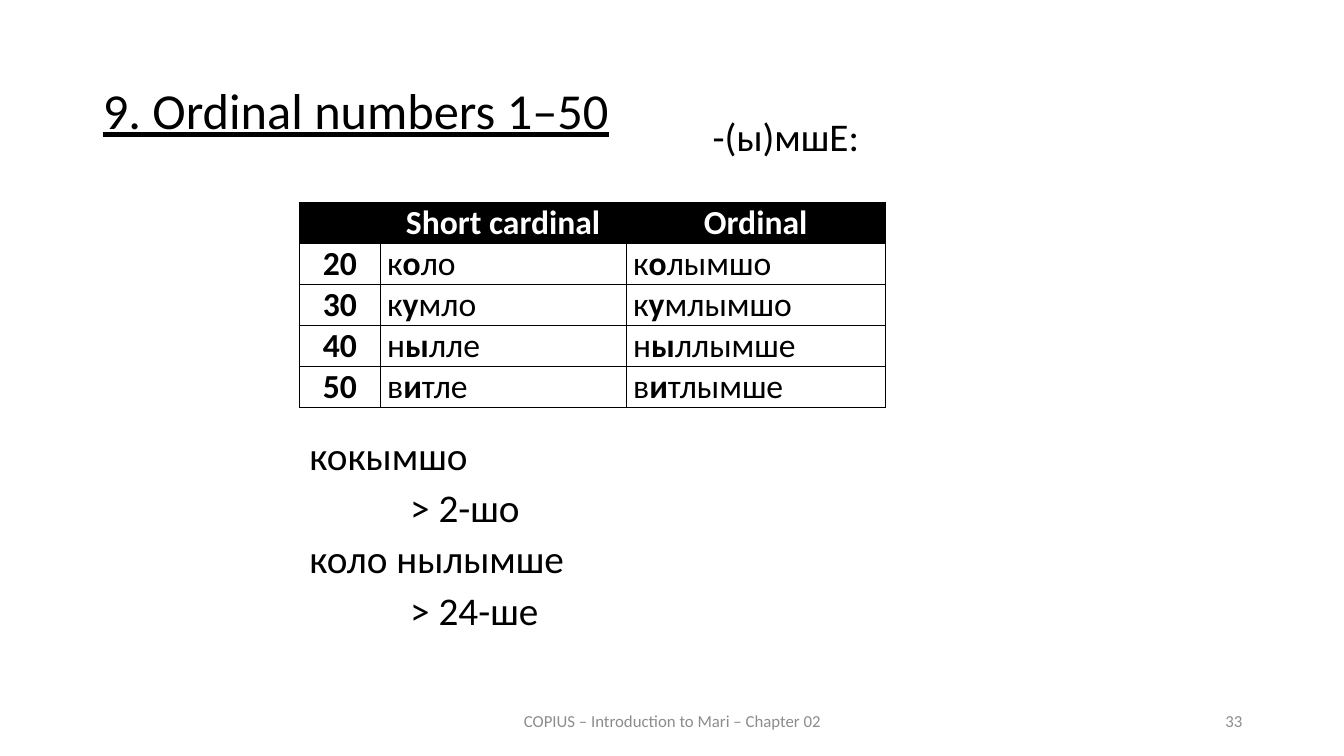
"""Build a slide on the Mari ordinal numbers 20 to 50."""
from lxml import etree
from pptx import Presentation
from pptx.dml.color import RGBColor
from pptx.enum.text import MSO_ANCHOR, PP_ALIGN
from pptx.oxml.ns import qn
from pptx.util import Inches, Pt

BLACK = RGBColor(0x00, 0x00, 0x00)
WHITE = RGBColor(0xFF, 0xFF, 0xFF)
GREY = RGBColor(0x8C, 0x8C, 0x8C)
LEFT, CENTER, RIGHT = PP_ALIGN.LEFT, PP_ALIGN.CENTER, PP_ALIGN.RIGHT
JUSTIFY = PP_ALIGN.JUSTIFY
TOP, MIDDLE = MSO_ANCHOR.TOP, MSO_ANCHOR.MIDDLE

TITLE = dict(size=Pt(36), underline=True)
BODY = dict(size=Pt(28))
FOOTER = dict(size=Pt(12), color=GREY)
HEADER = dict(size=Pt(24), bold=True, color=WHITE)
CELL = dict(size=Pt(24), bold=False)

COLUMNS = [0.8, 2.44, 2.57]
ROW_HEIGHT = 0.4
HEADINGS = ["", "Short cardinal", "Ordinal"]
NUMERALS = [
    ("20", "к", "о", "ло", "лымшо"),
    ("30", "к", "у", "мло", "млымшо"),
    ("40", "н", "ы", "лле", "ллымше"),
    ("50", "в", "и", "тле", "тлымше"),
]
EXAMPLES = [("кокымшо", 0), ("> 2-шо", 1), ("коло нылымше", 0), ("> 24-ше", 1)]


class Deck:
    """Hold the font and the current slide, and add its elements."""

    def __init__(self, font="Calibri"):
        self.font = font
        self.prs = Presentation()
        self.prs.slide_width, self.prs.slide_height = Inches(13.33), Inches(7.5)
        self.s = self.prs.slides.add_slide(self.prs.slide_layouts[5])

    def run(self, p, text, style):
        r = p.add_run()
        r.text = text
        values = dict(name=self.font, color=BLACK) | style
        r.font.color.rgb = values.pop("color")
        for name, value in values.items():
            setattr(r.font, name, value)

    def fill_text(self, sp, box, lines, style, anchor, **paragraph):
        sp.left, sp.top, sp.width, sp.height = map(Inches, box)
        tf = sp.text_frame
        tf.word_wrap = True
        tf.vertical_anchor = anchor
        for i, (text, indent) in enumerate(lines):
            p = tf.add_paragraph() if i else tf.paragraphs[0]
            for name, value in paragraph.items():
                setattr(p, name, value)
            if indent:
                p._p.get_or_add_pPr().set("marL", str(Inches(indent)))
            self.run(p, text, style)

    def title(self, text, box):
        self.fill_text(self.s.shapes.title, box, [(text, 0)], TITLE, MIDDLE,
                       alignment=LEFT, line_spacing=0.9)

    def text(self, lines, box, style=BODY, anchor=TOP, **paragraph):
        sp = self.s.shapes.add_textbox(*map(Inches, box))
        self.fill_text(sp, box, lines, style, anchor, **paragraph)

    def cell(self, cell, runs, alignment, fill):
        cell.margin_left = cell.margin_right = Inches(0.07)
        cell.margin_top = cell.margin_bottom = 0
        tcPr = cell._tc.get_or_add_tcPr()
        for side in ("lnL", "lnR", "lnT", "lnB"):
            ln = etree.SubElement(tcPr, qn(f"a:{side}"), w=str(Pt(0.5)))
            solid = etree.SubElement(ln, qn("a:solidFill"))
            etree.SubElement(solid, qn("a:srgbClr"), val=str(BLACK))
        cell.fill.solid()
        cell.fill.fore_color.rgb = fill
        p = cell.text_frame.paragraphs[0]
        p.alignment = alignment
        for text, style in runs:
            if text:
                self.run(p, text, style)

    def table(self, left, top):
        rows = len(NUMERALS) + 1
        table = self.s.shapes.add_table(
            rows, len(COLUMNS), Inches(left), Inches(top),
            Inches(sum(COLUMNS)), Inches(rows * ROW_HEIGHT)).table
        for column, width in zip(table.columns, COLUMNS):
            column.width = Inches(width)
        for c, heading in enumerate(HEADINGS):
            self.cell(table.cell(0, c), [(heading, HEADER)], CENTER, BLACK)
        stressed = CELL | dict(bold=True)
        for i, (number, onset, vowel, *endings) in enumerate(NUMERALS, 1):
            self.cell(table.cell(i, 0), [(number, stressed)], CENTER, WHITE)
            for c, ending in enumerate(endings, 1):
                runs = [(onset, CELL), (vowel, stressed), (ending, CELL)]
                self.cell(table.cell(i, c), runs, JUSTIFY, WHITE)


def main():
    deck = Deck()
    deck.title("9. Ordinal numbers 1–50", (0.92, 0.4, 11.5, 1.45))
    deck.table(2.97, 2.01)
    deck.text([("-(ы)мшЕ:", 0)], (6.97, 1.12, 1.81, 0.71),
              line_spacing=0.9, space_before=Pt(10))
    deck.text(EXAMPLES, (2.97, 4.32, 3.82, 2.14),
              line_spacing=0.8, space_before=Pt(10))
    deck.text([("COPIUS – Introduction to Mari – Chapter 02", 0)],
              (4.42, 6.95, 4.5, 0.4), FOOTER, MIDDLE, alignment=CENTER)
    deck.text([("33", 0)], (9.42, 6.95, 3, 0.4), FOOTER, MIDDLE, alignment=RIGHT)
    deck.prs.save("out.pptx")


if __name__ == "__main__":
    main()
